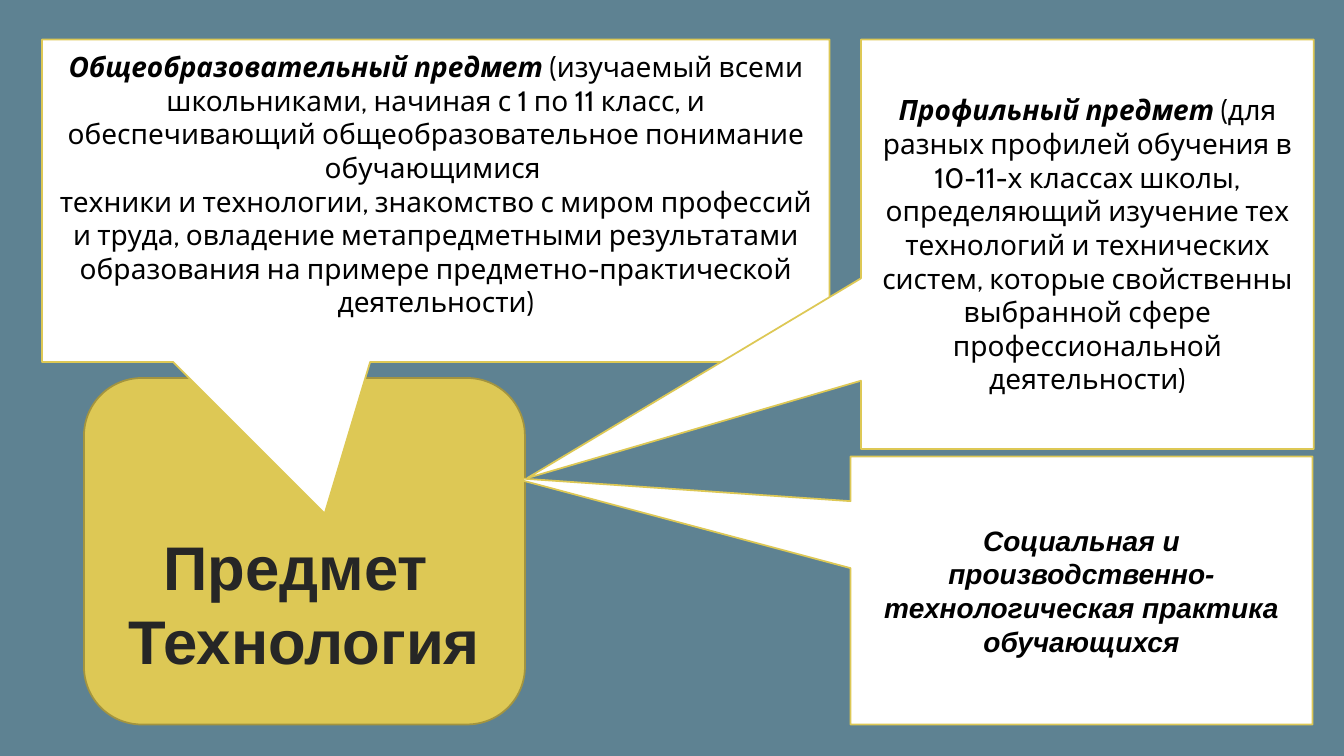
from pptx import Presentation
from pptx.dml.color import RGBColor
from pptx.enum.shapes import MSO_SHAPE
from pptx.enum.text import MSO_ANCHOR, PP_ALIGN
from pptx.util import Inches, Pt

ROUNDED = MSO_SHAPE.ROUNDED_RECTANGLE
CALLOUT = MSO_SHAPE.RECTANGULAR_CALLOUT
MIDDLE, BOTTOM = MSO_ANCHOR.MIDDLE, MSO_ANCHOR.BOTTOM
CENTER = PP_ALIGN.CENTER

SLATE = RGBColor(0x5E, 0x82, 0x92)
GOLD = RGBColor(0xDD, 0xC8, 0x55)
DARK_GOLD = RGBColor(0xA3, 0x94, 0x3F)
WHITE = RGBColor(0xFF, 0xFF, 0xFF)
BLACK = RGBColor(0x00, 0x00, 0x00)
CHARCOAL = RGBColor(0x26, 0x26, 0x26)

COLUMNS, ROWS = 32, 18
LINE_HEIGHT = 1.2


def add_text(paragraph, text, size=20, font="Cabin", color=BLACK, bold=False, italic=False):
    paragraph.alignment = CENTER
    paragraph.line_spacing = Pt(size * LINE_HEIGHT)
    run = paragraph.add_run()
    run.text = text
    run.font.size = Pt(size)
    run.font.name = font
    run.font.color.rgb = color
    run.font.bold = bold
    run.font.italic = italic


class SubjectSlide:
    def __init__(self, deck):
        self.column = deck.slide_width / COLUMNS
        self.row = deck.slide_height / ROWS
        self.slide = deck.slides.add_slide(deck.slide_layouts[6])
        self.slide.background.fill.solid()
        self.slide.background.fill.fore_color.rgb = SLATE

    def panel(self, kind, area, fill, line, anchor, bottom_inset):
        left, top, width, height = area
        panel = self.slide.shapes.add_shape(
            kind, int(left * self.column), int(top * self.row),
            int(width * self.column), int(height * self.row))
        panel.shadow.inherit = False
        panel.fill.solid()
        panel.fill.fore_color.rgb = fill
        panel.line.color.rgb = line
        panel.line.width = Pt(1.25)
        panel.text_frame.word_wrap = True
        panel.text_frame.vertical_anchor = anchor
        panel.text_frame.margin_bottom = Inches(bottom_inset)
        return panel

    def subject(self, area, lines):
        frame = self.panel(ROUNDED, area, GOLD, DARK_GOLD, BOTTOM, 0.31).text_frame
        for index, line in enumerate(lines):
            paragraph = frame.add_paragraph() if index else frame.paragraphs[0]
            add_text(paragraph, line, size=44, font="Arial", color=CHARCOAL, bold=True)

    def callout(self, area, pointer, term, details=(), font="Cabin", bottom_inset=0.05):
        panel = self.panel(CALLOUT, area, WHITE, GOLD, MIDDLE, bottom_inset)
        panel.adjustments[0], panel.adjustments[1] = pointer
        frame = panel.text_frame
        add_text(frame.paragraphs[0], term, font=font, bold=True, italic=True)
        for index, detail in enumerate(details):
            paragraph = frame.add_paragraph() if index else frame.paragraphs[0]
            add_text(paragraph, detail, font=font)


def main():
    deck = Presentation()
    deck.slide_width, deck.slide_height = Inches(13.33), Inches(7.5)
    page = SubjectSlide(deck)
    page.subject((2, 9, 10.5, 8.25), ["Предмет ", "Технология"])
    page.callout(
        (1, 0.94, 18.75, 7.68), (-0.141, 0.97), "Общеобразовательный предмет ",
        ["(изучаемый всеми школьниками, начиная с 1 по 11 класс, и обеспечивающий "
         "общеобразовательное понимание обучающимися ",
         "техники и технологии, знакомство с миром профессий и труда, овладение "
         "метапредметными результатами образования на примере "
         "предметно-практической деятельности)"],
        bottom_inset=0.38)
    page.callout(
        (20.25, 10.87, 11, 6.38), (-1.231, -0.42),
        "Социальная и производственно-технологическая практика обучающихся",
        font="Arial")
    page.callout(
        (20.5, 0.94, 10.78, 9.75), (-1.237, 0.571), "Профильный предмет ",
        ["(для разных профилей обучения в 10-11-х классах школы, определяющий "
         "изучение тех технологий и технических систем, которые свойственны "
         "выбранной сфере профессиональной деятельности)"])
    deck.save("out.pptx")


if __name__ == "__main__":
    main()
